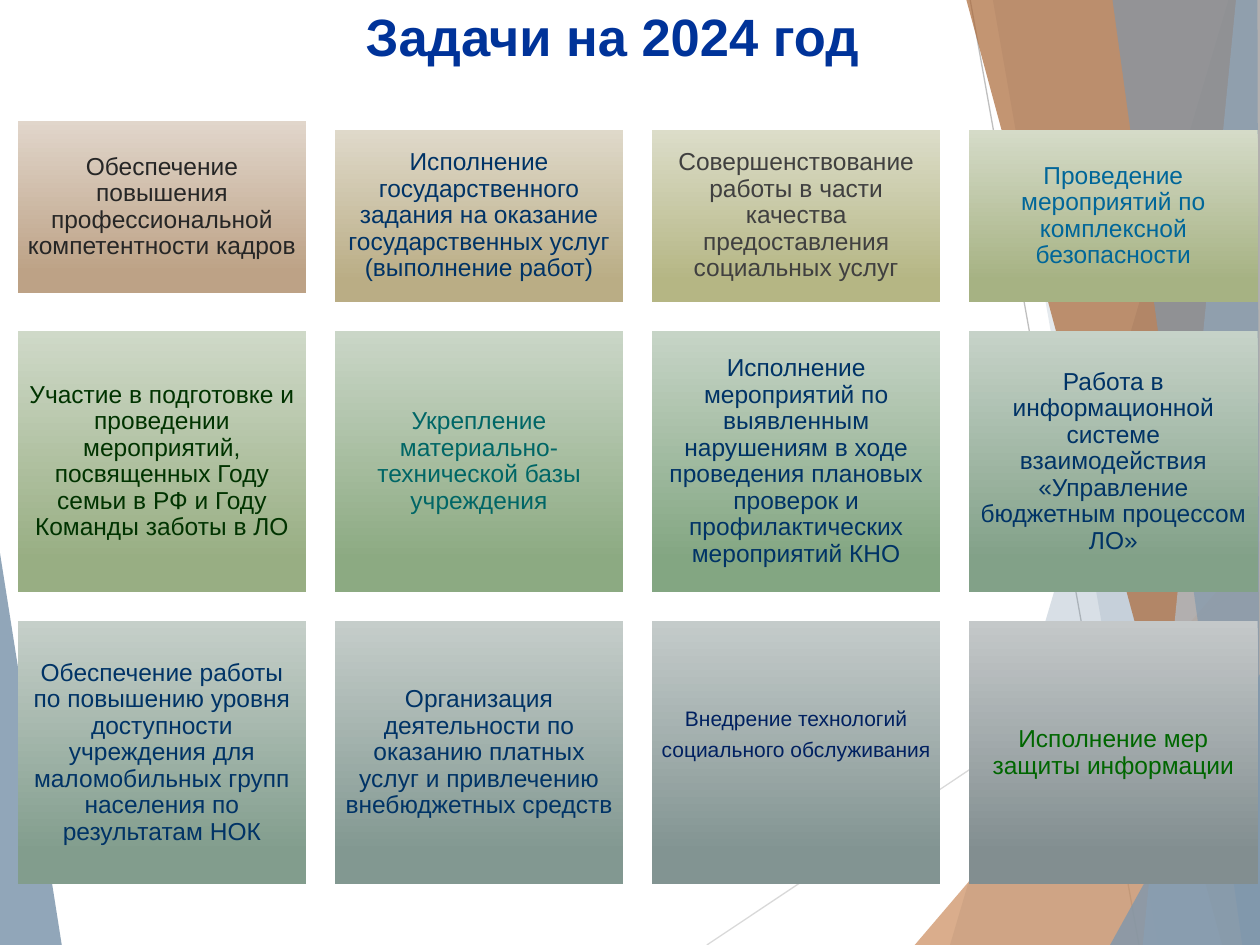
from lxml import etree
from pptx import Presentation
from pptx.dml.color import RGBColor
from pptx.enum.shapes import MSO_CONNECTOR, MSO_SHAPE
from pptx.enum.text import MSO_ANCHOR, PP_ALIGN
from pptx.oxml.ns import qn
from pptx.util import Inches, Pt

LINE = MSO_CONNECTOR.STRAIGHT
RECT = MSO_SHAPE.RECTANGLE
MIDDLE = MSO_ANCHOR.MIDDLE
CENTER = PP_ALIGN.CENTER

COLORS = {
    "title": "003399", "navy": "003366", "dark": "262626", "gray": "404040",
    "blue": "006699", "forest": "003300", "teal": "006666", "ink": "002060",
    "green": "006600", "steel": "7E97AD", "mist": "B2C1CE", "sand": "CC8E60",
    "brown": "AA6837", "pale": "D9D9D9", "silver": "BFBFBF",
}

# Points, colour and opacity in percent, from back to front
SHARDS = [
    ([(0, 4.39), (0.49, 7.5), (0, 7.5)], "steel", 85),
    ([(9.75, 0), (7.54, 7.5), (10, 7.5), (10, 0)], "steel", 30),
    ([(7.88, 0), (9.19, 7.5), (10, 7.5), (10, 0)], "steel", 20),
    ([(7.26, 7.5), (10, 4.29), (10, 7.5)], "sand", 72),
    ([(7.67, 0), (9.7, 7.5), (10, 7.5), (10, 0)], "brown", 70),
    ([(9.81, 0), (9.07, 7.5), (10, 7.5), (10, 0)], "mist", 70),
    ([(8.83, 0), (9.86, 7.5), (10, 7.5), (9.98, 0)], "steel", 65),
    ([(8.81, 7.5), (10, 5.35), (10, 7.5)], "steel", 80),
]
RAYS = [
    ((5.61, 7.5), (10, 4.57), "pale"),
    ((7.7, 0), (9.04, 7.5), "silver"),
]

# Text, its colour, top and bottom of the gradient
TASKS = [
    ("Обеспечение повышения профессиональной компетентности кадров",
     "dark", "E1D6CB", "BDA286"),
    ("Исполнение государственного задания на оказание государственных услуг "
     "(выполнение работ)", "navy", "DFD9CA", "BAAD85"),
    ("Совершенствование работы в части качества предоставления социальных услуг",
     "gray", "DCDDC9", "B5B684"),
    ("Проведение мероприятий по комплексной безопасности",
     "blue", "D5DBC8", "A6B283"),
    ("Участие в подготовке и проведении мероприятий, посвященных Году семьи в РФ "
     "и Году Команды заботы в ЛО", "forest", "CFD9C8", "98AE83"),
    ("Укрепление материально- технической базы учреждения",
     "teal", "CAD6C7", "8CAA82"),
    ("Исполнение мероприятий по выявленным нарушениям в ходе проведения плановых "
     "проверок и профилактических мероприятий КНО", "navy", "C6D4C6", "83A682"),
    ("Работа в информационной системе взаимодействия «Управление бюджетным "
     "процессом ЛО»", "navy", "C6D2C8", "82A188"),
    ("Обеспечение работы по повышению уровня доступности учреждения для "
     "маломобильных групп населения по результатам НОК",
     "navy", "C5CFC9", "829D8D"),
    ("Организация деятельности по оказанию платных услуг и привлечению "
     "внебюджетных средств", "navy", "C5CDCA", "829891"),
    ("Внедрение технологий\nсоциального обслуживания", "ink", "C4CBCA", "829492"),
    ("Исполнение мер защиты информации", "green", "C4C8C9", "828E90"),
]
COLS = 4
ROWS = [(1.03, 1.37), (2.63, 2.07), (4.93, 2.09)]  # top, height
LEFT, STEP, WIDTH = 0.14, 2.517, 2.29
RAISED = 0   # the first card sits a little higher
SMALL = 10   # the card in smaller type, set above its middle


def rgb(name):
    return RGBColor.from_string(COLORS.get(name, name))


def write(shape, text, size=14, color="navy", bold=False, pad=0.06, foot=None,
          lead=0.9, after=0):
    frame = shape.text_frame
    frame.word_wrap = True
    frame.vertical_anchor = MIDDLE
    frame.margin_left = frame.margin_right = frame.margin_top = Inches(pad)
    frame.margin_bottom = Inches(pad if foot is None else foot)
    frame.text = text
    for para in frame.paragraphs:
        para.alignment = CENTER
        para.line_spacing = lead
        para.space_before, para.space_after = Pt(0), Pt(after)
        font = para.runs[0].font
        font.name, font.size, font.bold = "Arial", Pt(size), bold
        font.color.rgb = rgb(color)


def shard(slide, points, color, alpha):
    spots = [(Inches(x), Inches(y)) for x, y in points]
    pen = slide.shapes.build_freeform(*spots[0])
    pen.add_line_segments(spots[1:])
    shape = pen.convert_to_shape()
    shape.shadow.inherit = False
    shape.line.fill.background()
    shape.fill.solid()
    shape.fill.fore_color.rgb = rgb(color)
    tint = shape.fill._xPr.find(".//" + qn("a:srgbClr"))
    etree.SubElement(tint, qn("a:alpha"), val=str(alpha * 1000))


def ray(slide, start, end, color):
    line = slide.shapes.add_connector(
        LINE, *[Inches(v) for v in (*start, *end)])
    line.line.color.rgb = rgb(color)
    line.line.width = Pt(0.75)
    etree.SubElement(line._element.spPr, qn("a:effectLst"))


def backdrop(slide):
    shard(slide, *SHARDS[0])
    for item in RAYS:
        ray(slide, *item)
    for item in SHARDS[1:]:
        shard(slide, *item)


def heading(slide, box):
    title = slide.shapes.title
    title.left, title.top, title.width, title.height = map(Inches, box)
    write(title, "Задачи на 2024 год", size=30, color="title", bold=True, lead=1)


def card(slide, box, task, **style):
    text, color, top, base = task
    shape = slide.shapes.add_shape(RECT, *map(Inches, box))
    shape.shadow.inherit = False
    shape.line.fill.background()
    shape.fill.gradient()
    shape.fill.gradient_angle = 270
    for stop, place, tone in zip(shape.fill.gradient_stops, (0, 0.88), (top, base)):
        stop.position = place
        stop.color.rgb = rgb(tone)
    write(shape, text, color=color, **style)


def grid(slide):
    for i, task in enumerate(TASKS):
        row, col = divmod(i, COLS)
        top, height = ROWS[row]
        if i == RAISED:
            top -= 0.07
        style = {}
        if i == SMALL:
            style = {"size": 12, "pad": 0.05, "foot": 0.33, "after": 4.8}
        card(slide, (LEFT + col * STEP, top, WIDTH, height), task, **style)


def main():
    deck = Presentation()
    deck.slide_width, deck.slide_height = Inches(10), Inches(7.5)
    slide = deck.slides.add_slide(deck.slide_layouts[5])
    backdrop(slide)
    heading(slide, (1.14, -0.03, 7.44, 0.63))
    grid(slide)
    deck.save("out.pptx")


if __name__ == "__main__":
    main()
